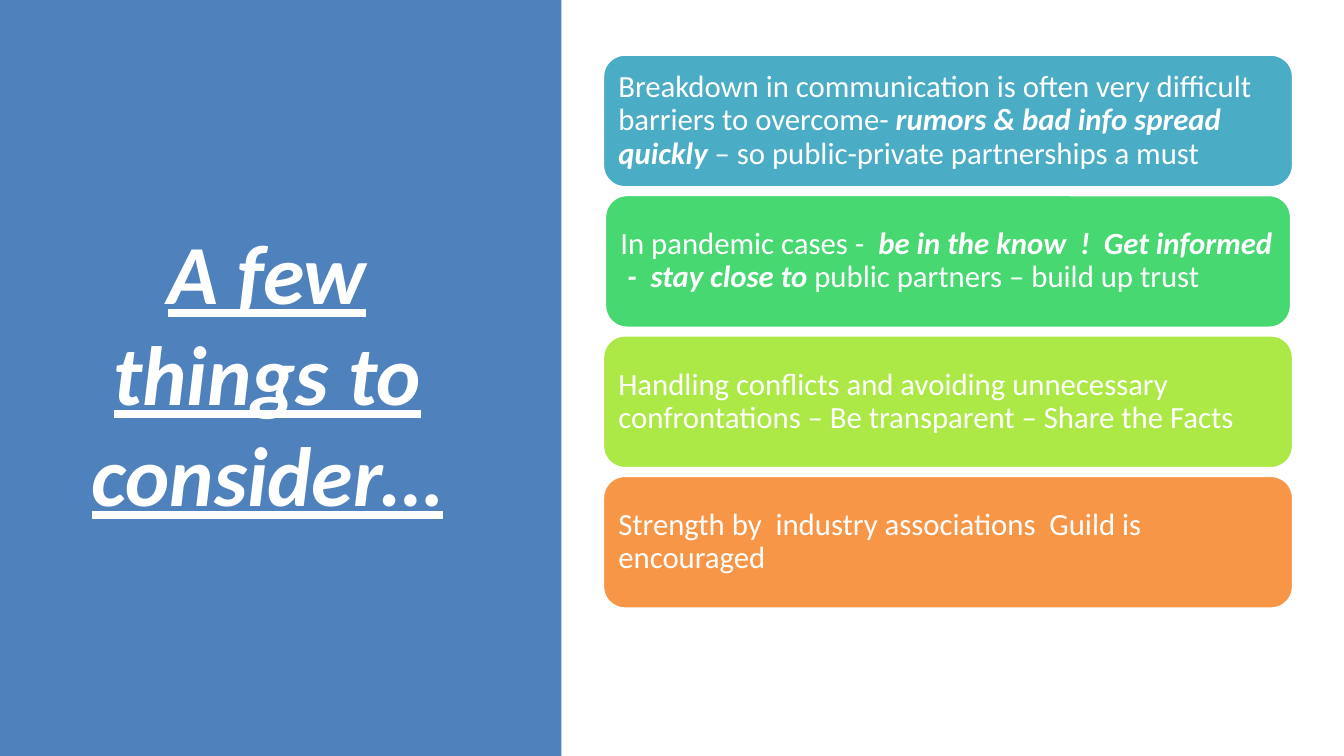
"""Build the slide "A few things to consider…" with a title panel and four message cards."""
from pptx import Presentation
from pptx.dml.color import RGBColor
from pptx.enum.shapes import MSO_SHAPE as Shape
from pptx.enum.text import MSO_ANCHOR as Anchor, MSO_AUTO_SIZE as AutoSize, PP_ALIGN as Align
from pptx.util import Inches, Pt

COLORS = {
    "white": "FFFFFF",
    "panel": "4F81BD",
    "teal": "4BACC6",
    "green": "47D872",
    "lime": "ACE946",
    "orange": "F79646",
}
FONT = "Calibri"
CARD_LEFT, CARD_TOP, CARD_WIDTH, CARD_HEIGHT = 5.98, 0.54, 6.85, 1.32
ROW_STEP = 1.393
CARD_INSET = Inches(0.09)

CARDS = [
    ("teal", 0, [
        ("Breakdown in communication is often very difficult barriers to overcome- ", False),
        ("rumors & bad info spread quickly ", True),
        ("– so public-private partnerships a must", False),
    ]),
    ("green", 0.02, [
        ("In pandemic cases -  ", False),
        ("be in the know  !  Get informed  -  stay close to ", True),
        ("public partners – build up trust", False),
    ]),
    ("lime", 0, [
        ("Handling conflicts and avoiding unnecessary confrontations "
         "– Be transparent – Share the Facts", False),
    ]),
    ("orange", 0, [("Strength by  industry associations  Guild is encouraged", False)]),
]


def add_filled_shape(kind, left, top, width, height, color):
    shape = slide.shapes.add_shape(kind, Inches(left), Inches(top), Inches(width), Inches(height))
    shape.shadow.inherit = False
    shape.fill.solid()
    shape.fill.fore_color.rgb = RGBColor.from_string(COLORS[color])
    shape.line.fill.background()
    return shape


def style_font(font, size):
    font.name = FONT
    font.size = Pt(size)
    font.color.rgb = RGBColor.from_string(COLORS["white"])


presentation = Presentation()
presentation.slide_width = Inches(13.333)
presentation.slide_height = Inches(7.5)
slide = presentation.slides.add_slide(presentation.slide_layouts.get_by_name("Title Only"))

panel = add_filled_shape(Shape.RECTANGLE, 0, 0, 5.57, 7.5, "panel")

title = slide.shapes.title
panel.element.addnext(title.element)
title.left, title.top = Inches(0.57), Inches(0.68)
title.width, title.height = Inches(4.16), Inches(6.02)
title_frame = title.text_frame
title_frame.text = "A few things to consider…"
title_frame.word_wrap = True
title_frame.auto_size = AutoSize.NONE
title_frame.vertical_anchor = Anchor.MIDDLE
paragraph = title_frame.paragraphs[0]
paragraph.alignment = Align.CENTER
style_font(paragraph.font, 60)
paragraph.font.bold = paragraph.font.italic = paragraph.font.underline = True

for row, (color, indent, runs) in enumerate(CARDS):
    card = add_filled_shape(Shape.ROUNDED_RECTANGLE, CARD_LEFT + indent, CARD_TOP + row * ROW_STEP,
                            CARD_WIDTH - 2 * indent, CARD_HEIGHT, color)
    card.line.color.rgb = RGBColor.from_string(COLORS["white"])
    card.line.width = Pt(2)
    frame = card.text_frame
    frame.word_wrap = True
    frame.vertical_anchor = Anchor.MIDDLE
    frame.margin_left = frame.margin_right = CARD_INSET
    frame.margin_top = frame.margin_bottom = CARD_INSET
    paragraph = frame.paragraphs[0]
    paragraph.alignment = Align.LEFT
    paragraph.line_spacing = 0.9
    style_font(paragraph.font, 22)
    for text, emphasized in runs:
        run = paragraph.add_run()
        run.text = text
        if emphasized:
            run.font.bold = run.font.italic = True

presentation.save("out.pptx")
